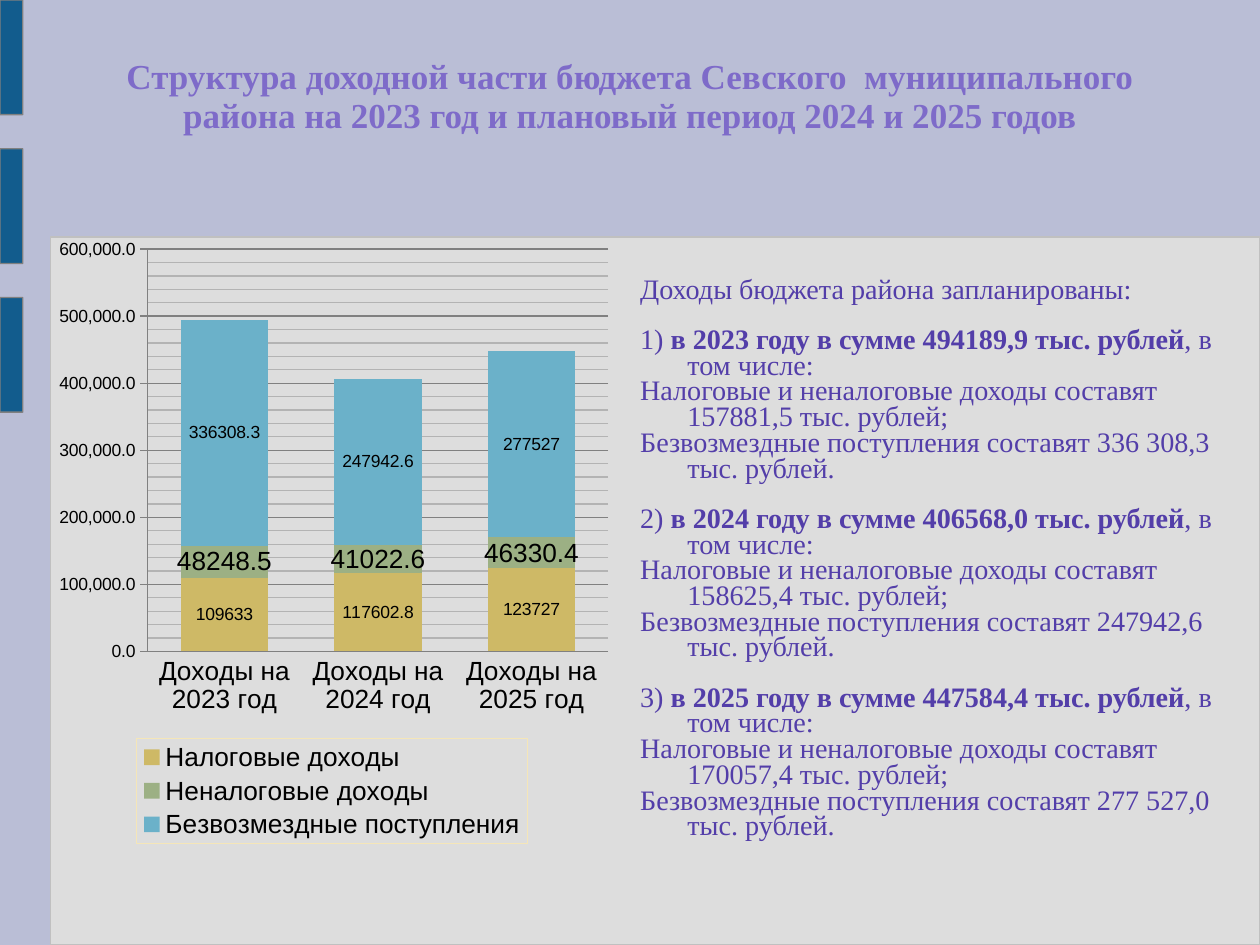
import pptx
import pptx.chart.data
import pptx.dml.color
import pptx.enum.chart
import pptx.enum.shapes
import pptx.enum.text
import pptx.oxml
import pptx.oxml.ns
import pptx.util
from dataclasses import dataclass

Pt = pptx.util.Pt
qn = pptx.oxml.ns.qn


@dataclass(frozen=True)
class Theme:
    background: str = "BABED6"
    panel: str = "DDDDDD"
    panel_line: str = "C0C0C0"
    tab: str = "125C8D"
    axis: str = "808080"
    minor_grid: str = "B3B3B3"
    legend_line: str = "F5E6B8"
    title: str = "7E6BC9"
    body: str = "533EA9"
    black: str = "000000"
    serif: str = "Times New Roman"
    sans: str = "Arial"
    title_size: float = 20
    body_size: float = 16.1
    large: float = 15
    small: float = 10


THEME = Theme()
TITLE = ("Структура доходной части бюджета Севского  муниципального района "
         "на 2023 год и плановый период 2024 и 2025 годов")
# year, total, tax and non-tax income, transfers
PLANS = [("2023", "494189,9", "157881,5", "336 308,3"),
         ("2024", "406568,0", "158625,4", "247942,6"),
         ("2025", "447584,4", "170057,4", "277 527,0")]
# name, values, colour, label size
SERIES = [
    ("Налоговые доходы", (109633, 117602.8, 123727), "CEB966", THEME.small),
    ("Неналоговые доходы", (48248.5, 41022.6, 46330.4), "9CB084", THEME.large),
    ("Безвозмездные поступления", (336308.3, 247942.6, 277527), "6BB1C9", THEME.small),
]


def rgb(value):
    return pptx.dml.color.RGBColor.from_string(value)


def set_font(font, size, face=THEME.sans, color=THEME.black, bold=False):
    font.size, font.name, font.bold = Pt(size), face, bold
    font.color.rgb = rgb(color)


def write(para, text, **style):
    span = para.add_run()
    span.text = text
    set_font(span.font, **style)


def place(holder, box, top_inset=0):
    holder.left, holder.top, holder.width, holder.height = (Pt(n) for n in box)
    frame = holder.text_frame
    frame.word_wrap = True
    frame.auto_size = pptx.enum.text.MSO_AUTO_SIZE.NONE
    frame.margin_left = frame.margin_right = frame.margin_bottom = 0
    frame.margin_top = Pt(top_inset)
    return frame


def add_panel(page, box, fill, line, radius):
    kind = pptx.enum.shapes.MSO_SHAPE.ROUNDED_RECTANGLE
    panel = page.shapes.add_shape(kind, *(Pt(n) for n in box))
    panel.adjustments[0] = radius
    panel.shadow.inherit = False
    panel.fill.solid()
    panel.fill.fore_color.rgb = rgb(fill)
    panel.line.color.rgb = rgb(line)
    panel.line.width = Pt(0.75)


def add_backdrop(page, box):
    left, top, width, height = box
    page.background.fill.solid()
    page.background.fill.fore_color.rgb = rgb(THEME.background)
    add_panel(page, (left + 28.8, top + 135.4, width - 28.8, height - 135.4),
              THEME.panel, THEME.panel_line, 0)
    for row in range(3):
        add_panel(page, (left, top + row * 85, 13, 65.5), THEME.tab, THEME.axis, 0.01)


def fill_title(holder, box):
    frame = place(holder, box)
    frame.vertical_anchor = pptx.enum.text.MSO_ANCHOR.MIDDLE
    para = frame.paragraphs[0]
    para.alignment = pptx.enum.text.PP_ALIGN.CENTER
    para.line_spacing = 0.93
    write(para, TITLE, size=THEME.title_size, face=THEME.serif,
          color=THEME.title, bold=True)


def fill_body(holder, box):
    frame = place(holder, box, top_inset=31)
    frame.vertical_anchor = pptx.enum.text.MSO_ANCHOR.TOP
    style = dict(size=THEME.body_size, face=THEME.serif, color=THEME.body)

    def add_item(para, *texts, before=0.0):
        """Write a hanging paragraph; every second text is bold."""
        para.line_spacing = 0.76
        para.space_before, para.space_after = Pt(before), Pt(0)
        para.alignment = pptx.enum.text.PP_ALIGN.LEFT
        settings = para._p.get_or_add_pPr()
        settings.set("marL", str(Pt(27)))
        settings.set("indent", str(Pt(-27)))
        settings.append(pptx.oxml.parse_xml(
            f'<a:buNone {pptx.oxml.ns.nsdecls("a")}/>'))
        for index, text in enumerate(texts):
            write(para, text, bold=index % 2 == 1, **style)

    add_item(frame.paragraphs[0], "Доходы бюджета района запланированы:")
    for number, (year, total, own, transfers) in enumerate(PLANS, 1):
        add_item(frame.add_paragraph(), f"{number}) ",
                 f"в {year} году в сумме {total} тыс. рублей",
                 ", в том числе:", before=14.1)
        add_item(frame.add_paragraph(),
                 f"Налоговые и неналоговые доходы составят {own} тыс. рублей;")
        add_item(frame.add_paragraph(),
                 f"Безвозмездные поступления составят {transfers} тыс. рублей.")


def set_layout(element, index, box, inner=False):
    """Fix a chart part at the given fractions of the chart."""
    for old in element.findall(qn("c:layout")):
        element.remove(old)
    target = '<c:layoutTarget val="inner"/>' if inner else ""
    modes = '<c:xMode val="edge"/><c:yMode val="edge"/>'
    sizes = "".join(f'<c:{key} val="{value}"/>' for key, value in zip("xywh", box))
    element.insert(index, pptx.oxml.parse_xml(
        f'<c:layout {pptx.oxml.ns.nsdecls("c")}><c:manualLayout>'
        f'{target}{modes}{sizes}</c:manualLayout></c:layout>'))


def line_properties(color):
    return pptx.oxml.parse_xml(
        f'<c:spPr {pptx.oxml.ns.nsdecls("c", "a")}><a:ln w="{Pt(0.75)}"><a:solidFill>'
        f'<a:srgbClr val="{color}"/></a:solidFill></a:ln></c:spPr>')


def format_axes(chart):
    values, categories = chart.value_axis, chart.category_axis
    ticks = pptx.enum.chart.XL_TICK_MARK
    values.minimum_scale, values.maximum_scale = 0, 600000
    values.major_unit, values.minor_unit = 100000, 20000
    values.has_major_gridlines = values.has_minor_gridlines = True
    values.major_tick_mark = ticks.OUTSIDE
    values.minor_tick_mark = ticks.NONE
    values.tick_labels.number_format = "#,##0.0"
    values.tick_labels.number_format_is_linked = False
    set_font(values.tick_labels.font, THEME.small)
    categories.major_tick_mark = ticks.NONE
    set_font(categories.tick_labels.font, THEME.large)
    for part in (values, categories, values.major_gridlines):
        part.format.line.color.rgb = rgb(THEME.axis)
        part.format.line.width = Pt(0.75)
    minor_gridlines = values._element.find(qn("c:minorGridlines"))
    minor_gridlines.append(line_properties(THEME.minor_grid))


def format_legend(chart):
    chart.has_legend = True
    legend = chart.legend
    legend.position = pptx.enum.chart.XL_LEGEND_POSITION.BOTTOM
    legend.include_in_layout = False
    set_font(legend.font, THEME.large)
    set_layout(legend._element, 1, (0.16, 0.83, 0.68, 0.17))
    legend._element.find(qn("c:overlay")).addnext(line_properties(THEME.legend_line))


def add_income_chart(page, box):
    data = pptx.chart.data.CategoryChartData()
    data.categories = [f"Доходы на {plan[0]} год" for plan in PLANS]
    for name, values, _, _ in SERIES:
        data.add_series(name, values)
    kind = pptx.enum.chart.XL_CHART_TYPE.COLUMN_STACKED
    chart = page.shapes.add_chart(kind, *(Pt(n) for n in box), data).chart
    chart.has_title = False
    set_font(chart.font, 18)
    plot = chart.plots[0]
    plot.gap_width, plot.overlap, plot.vary_by_categories = 75, 100, False
    for series, (_, _, color, size) in zip(plot.series, SERIES):
        series.format.fill.solid()
        series.format.fill.fore_color.rgb = rgb(color)
        series.data_labels.show_value = True
        set_font(series.data_labels.font, size)
    format_axes(chart)
    format_legend(chart)
    plot_area = chart._chartSpace.find(qn("c:chart")).find(qn("c:plotArea"))
    set_layout(plot_area, 0, (0.18, 0.04, 0.8, 0.65), inner=True)


def main():
    deck = pptx.Presentation()
    deck.slide_width, deck.slide_height = Pt(720), Pt(540)
    page = deck.slides.add_slide(deck.slide_layouts[1])
    title, body = page.placeholders
    add_backdrop(page, (0, 0, 720, 540))
    for holder in (title, body):
        page.shapes.element.append(holder.element)  # bring in front of the panel
    fill_title(title, (52.5, 0, 615, 111.6))
    add_income_chart(page, (25.2, 128.2, 329, 354.2))
    fill_body(body, (365.8, 128.2, 339.8, 354.2))
    deck.save("out.pptx")


if __name__ == "__main__":
    main()
